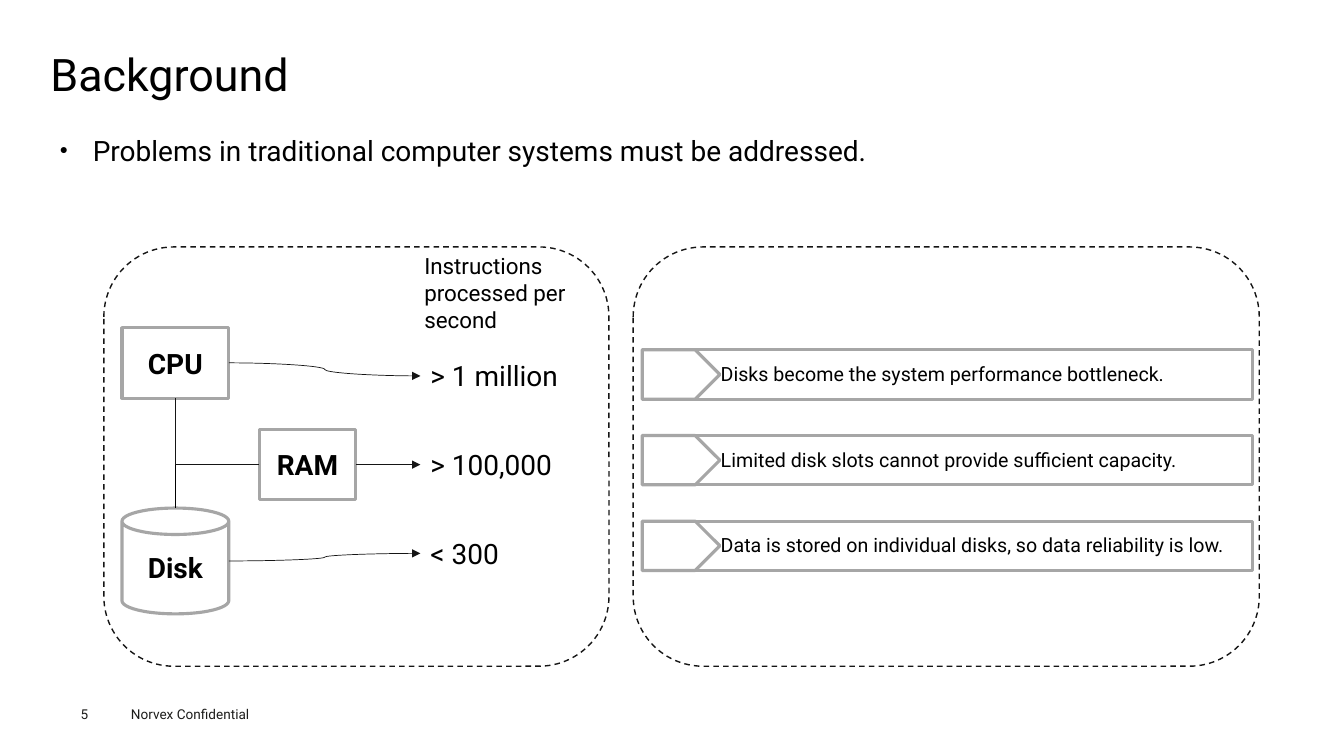
from dataclasses import dataclass

from lxml.etree import SubElement
from pptx import Presentation
from pptx.dml.color import RGBColor
from pptx.enum.dml import MSO_LINE
from pptx.enum.shapes import MSO_CONNECTOR as Link, MSO_SHAPE as Shape
from pptx.enum.text import MSO_ANCHOR as Anchor, MSO_AUTO_SIZE as AutoSize, PP_ALIGN as Align
from pptx.oxml.ns import qn
from pptx.util import Inches, Pt


@dataclass(frozen=True)
class Theme:
    font: str = "Roboto"
    text: RGBColor = RGBColor(0x00, 0x00, 0x00)
    stroke: RGBColor = RGBColor(0x15, 0x15, 0x15)
    frame: RGBColor = RGBColor(0xA6, 0xA6, 0xA6)
    footer: RGBColor = RGBColor(0x1D, 0x1D, 0x1B)
    title_size: float = 32
    body_size: float = 20
    heading_size: float = 16
    problem_size: float = 14
    footer_size: float = 9.7


@dataclass(frozen=True)
class Box:
    left: int
    top: int
    width: int
    height: int

    def inner(self, left, top, width, height):
        """Box placed in inches from this box's top left corner."""
        return Box(self.left + Inches(left), self.top + Inches(top), Inches(width), Inches(height))

    @property
    def bounds(self):
        return self.left, self.top, self.width, self.height


THEME = Theme()


# Shared parts
def style_text(para, size, color=THEME.text, bold=False):
    font = para.font
    font.name, font.size, font.bold = THEME.font, Pt(size), bold
    font.color.rgb = color


def add_text(page, box, text, size, color=THEME.text, wrap=True, inset=True):
    label = page.shapes.add_textbox(*box.bounds)
    frame = label.text_frame
    frame.word_wrap = wrap
    frame.auto_size = AutoSize.SHAPE_TO_FIT_TEXT
    if not inset:
        frame.margin_left = frame.margin_right = frame.margin_top = frame.margin_bottom = 0
    para = frame.paragraphs[0]
    para.text = text
    style_text(para, size, color)
    return label


def add_outline(shapes, kind, box, color=THEME.frame, width=2.25):
    shape = shapes.add_shape(kind, *box.bounds)
    shape.shadow.inherit = False
    shape.fill.background()
    shape.line.color.rgb = color
    shape.line.width = Pt(width)
    return shape


def add_panel(page, box):
    panel = add_outline(page.shapes, Shape.ROUNDED_RECTANGLE, box, THEME.stroke, 1)
    panel.line.dash_style = MSO_LINE.DASH


def add_device(page, kind, box, name):
    device = add_outline(page.shapes, kind, box)
    device.text_frame.vertical_anchor = Anchor.MIDDLE
    para = device.text_frame.paragraphs[0]
    para.text = name
    para.alignment = Align.CENTER
    style_text(para, THEME.body_size, bold=True)
    return device


def add_link(page, kind, start, end, color=THEME.stroke, width=1, arrow=False):
    link = page.shapes.add_connector(kind, *start, *end)
    link.line.color.rgb = color
    link.line.width = Pt(width)
    properties = link._element.spPr
    if arrow:
        SubElement(properties.find(qn("a:ln")), qn("a:tailEnd"), type="triangle")
    SubElement(properties, qn("a:effectLst"))
    return link


def right_middle(shape):
    return shape.left + shape.width, shape.top + shape.height // 2


def left_middle(shape):
    return shape.left, shape.top + shape.height // 2


def bottom_middle(shape):
    return shape.left + shape.width // 2, shape.top + shape.height


# Title and lead bullet
def add_heading(page, box):
    title = page.shapes.title
    title.left, title.top, title.width, title.height = box.inner(0, 0, 12.35, 0.54).bounds
    frame = title.text_frame
    frame.auto_size = AutoSize.NONE
    frame.margin_left = frame.margin_right = frame.margin_top = frame.margin_bottom = 0
    para = frame.paragraphs[0]
    para.text = "Background"
    para.alignment = Align.LEFT
    para.line_spacing = 0.9
    style_text(para, THEME.title_size)

    body = page.placeholders[1]
    body.left, body.top, body.width, body.height = box.inner(0, 0.66, 12.35, 5.33).bounds
    frame = body.text_frame
    frame.auto_size = AutoSize.NONE
    frame.margin_left = frame.margin_right = Inches(0.09)
    frame.margin_top = frame.margin_bottom = Inches(0.04)
    para = frame.paragraphs[0]
    para.text = "Problems in traditional computer systems must be addressed."
    para.alignment = Align.JUSTIFY
    para.line_spacing = 1.4
    para.space_before = Pt(0)
    properties = para._p.get_or_add_pPr()
    properties.set("marL", str(Inches(0.33)))
    properties.set("indent", str(-Inches(0.33)))
    SubElement(properties, qn("a:buSzPct"), val="50000")
    SubElement(properties, qn("a:buChar"), char="●")
    style_text(para, THEME.body_size)


# Left panel: devices and their speeds
def add_speed_panel(page, box):
    add_panel(page, box)
    cpu = add_device(page, Shape.RECTANGLE, box.inner(0.18, 0.8, 1.06, 0.7), "CPU")
    ram = add_device(page, Shape.RECTANGLE, box.inner(1.54, 1.81, 0.96, 0.7), "RAM")
    disk = add_device(page, Shape.CAN, box.inner(0.18, 2.59, 1.06, 1.05), "Disk")

    disk_top = disk.left + disk.width // 2, disk.top
    trunk = add_link(page, Link.STRAIGHT, bottom_middle(cpu), disk_top, THEME.text)
    trunk.begin_connect(cpu, 2)
    branch = add_link(page, Link.ELBOW, left_middle(ram), bottom_middle(cpu))
    branch._element.spPr.find(qn("a:prstGeom")).set("prst", "bentConnector2")

    add_text(page, box.inner(3.08, 0, 2.3, 0.91), "Instructions processed per second",
             THEME.heading_size)
    readings = [(cpu, "> 1 million", 1.57), (ram, "> 100,000", 1.45), (disk, "< 300", 0.92)]
    for row, (device, speed, width) in enumerate(readings):
        reading = add_text(page, box.inner(3.14, 1.06 + 0.88 * row, width, 0.44), speed,
                           THEME.body_size, wrap=False)
        add_link(page, Link.CURVE, right_middle(device), left_middle(reading),
                 width=0.5, arrow=True)


# Right panel: problems
def add_problem_panel(page, box):
    add_panel(page, box)
    problems = [
        ("Disks become the system performance bottleneck.", 4.7),
        ("Limited disk slots cannot provide sufficient capacity.", 4.85),
        ("Data is stored on individual disks, so data reliability is low.", 5.44),
    ]
    for row, (problem, width) in enumerate(problems):
        top = 1.02 + 0.85 * row
        bar = page.shapes.add_group_shape()
        add_outline(bar.shapes, Shape.RECTANGLE, box.inner(0.09, top, 6.05, 0.49))
        add_outline(bar.shapes, Shape.PENTAGON, box.inner(0.09, top, 0.77, 0.49))
        add_text(page, box.inner(0.77, top + 0.07, width, 0.34), problem,
                 THEME.problem_size, wrap=False)


# Footer
def add_footer(page, box):
    add_text(page, box.inner(0, 0.05, 0.55, 0.16), "5", THEME.footer_size, THEME.footer,
             inset=False)
    add_text(page, box.inner(0.4, 0, 1.6, 0.27), "Norvex Confidential", THEME.footer_size,
             THEME.footer)


def main():
    deck = Presentation()
    deck.slide_width, deck.slide_height = Inches(13.33), Inches(7.5)
    page = deck.slides.add_slide(deck.slide_layouts[1])
    add_heading(page, Box(Inches(0.5), Inches(0.49), Inches(12.35), Inches(5.99)))
    add_speed_panel(page, Box(Inches(1.03), Inches(2.45), Inches(5.01), Inches(4.16)))
    add_problem_panel(page, Box(Inches(6.28), Inches(2.45), Inches(6.21), Inches(4.16)))
    add_footer(page, Box(Inches(0.8), Inches(6.95), Inches(2), Inches(0.27)))
    deck.save("out.pptx")


if __name__ == "__main__":
    main()
